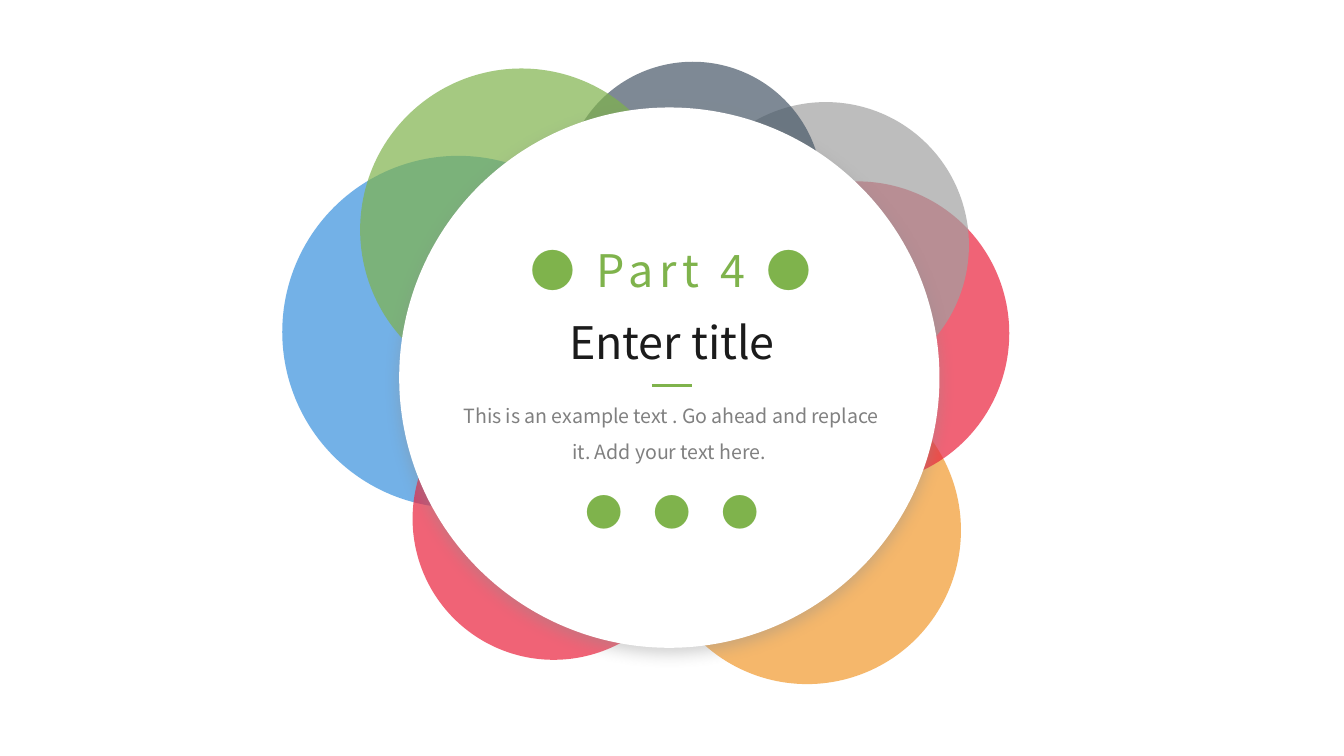
from lxml import etree
from pptx import Presentation
from pptx.dml.color import RGBColor
from pptx.enum import shapes, text
from pptx.oxml import parse_xml
from pptx.oxml.ns import nsdecls, qn
from pptx.util import Inches, Pt

FONT = "Noto Sans CJK JP"
COLORS = {
    "blue": "3891DE", "red": "EB223D", "orange": "F1992D", "gray": "A1A1A1",
    "slate": "485868", "green": "7FB34C", "white": "FFFFFF",
    "shadow": "8D8D8D", "title": "1B1B1B", "body": "808080",
}
PETAL_OPACITY = 70

# left, top, diameter, colour; back to front
PETALS = [
    (2.1, 1.16, 2.62, "blue"),
    (3.07, 2.81, 2.1, "red"),
    (4.86, 2.8, 2.29, "orange"),
    (5.25, 1.35, 2.26, "red"),
    (5.08, 0.76, 2.13, "gray"),
    (4.19, 0.46, 1.93, "slate"),
    (2.68, 0.51, 2.4, "green"),
]
DISC = (2.97, 0.8, 4.02, "white")

TITLE = "Enter title"
BODY = "This is an example text . Go ahead and replace it. Add your text here. "
PART = "● Part 4 ●"
DOTS = "● ● ●"


def rgb(name):
    return RGBColor.from_string(COLORS[name])


def add_circle(s, left, top, size, color):
    sp = s.shapes.add_shape(shapes.MSO_SHAPE.OVAL, Inches(left), Inches(top),
                            Inches(size), Inches(size))
    sp.shadow.inherit = False
    sp.fill.solid()
    sp.fill.fore_color.rgb = rgb(color)
    sp.line.fill.background()
    return sp


def set_opacity(sp, percent):
    clr = sp._element.spPr.find(qn("a:solidFill"))[0]
    etree.SubElement(clr, qn("a:alpha"), val=str(percent * 1000))


def add_soft_shadow(sp):
    effects = sp._element.spPr.find(qn("a:effectLst"))
    effects.append(parse_xml(
        f'<a:outerShdw {nsdecls("a")} blurRad="{Pt(8)}" dist="{Pt(3)}" '
        f'dir="5400000" algn="t" rotWithShape="0">'
        f'<a:srgbClr val="{COLORS["shadow"]}"><a:alpha val="40000"/></a:srgbClr>'
        f'</a:outerShdw>'))


def set_text(sp, box, content, size, color, anchor=text.MSO_ANCHOR.TOP,
             grow=True, wrap=True, spacing=0, line_spacing=1):
    """Place a text shape and format its only paragraph; spacing is in points."""
    sp.left, sp.top, sp.width, sp.height = map(Inches, box)
    tf = sp.text_frame
    tf.text = content
    tf.word_wrap = wrap
    fit = text.MSO_AUTO_SIZE
    tf.auto_size = fit.SHAPE_TO_FIT_TEXT if grow else fit.NONE
    tf.vertical_anchor = anchor
    p = tf.paragraphs[0]
    p.alignment = text.PP_ALIGN.CENTER
    p.line_spacing = line_spacing
    p.space_before = Pt(0)
    r = p.runs[0]
    r.font.name = FONT
    r.font.size = Pt(size)
    r.font.color.rgb = rgb(color)
    rPr = r.font._element
    rPr.set("spc", str(spacing * 100))
    etree.SubElement(rPr, qn("a:ea"), typeface=FONT)


def add_textbox(s):
    return s.shapes.add_textbox(0, 0, 0, 0)


def main():
    prs = Presentation()
    prs.slide_width = Inches(10)
    prs.slide_height = prs.slide_width * 9 // 16
    s = prs.slides.add_slide(prs.slide_layouts[0])
    title, body = s.placeholders

    for petal in PETALS:
        set_opacity(add_circle(s, *petal), PETAL_OPACITY)
    add_soft_shadow(add_circle(s, *DISC))

    # Placeholders start at the back; bring them above the disc.
    for sp in (title, body):
        s.shapes._spTree.append(sp._element)
    set_text(title, (4.09, 2.29, 1.82, 0.5), TITLE, 24, "title", wrap=False)
    set_text(body, (3.27, 2.87, 3.45, 0.63), BODY, 10.5, "body",
             line_spacing=1.5)

    rule = s.shapes.add_connector(shapes.MSO_CONNECTOR.STRAIGHT, Inches(4.85),
                                  Inches(2.87), Inches(5.15), Inches(2.87))
    rule.line.color.rgb = rgb("green")
    rule.line.width = Pt(1.5)
    etree.SubElement(rule._element.spPr, qn("a:effectLst"))

    set_text(add_textbox(s), (3.73, 1.76, 2.53, 0.5), PART, 24, "green",
             spacing=3)
    set_text(add_textbox(s), (4.41, 3.42, 1.18, 0.77), DOTS, 20, "green",
             anchor=text.MSO_ANCHOR.MIDDLE, grow=False, wrap=False, spacing=6)

    prs.save("out.pptx")


if __name__ == "__main__":
    main()
